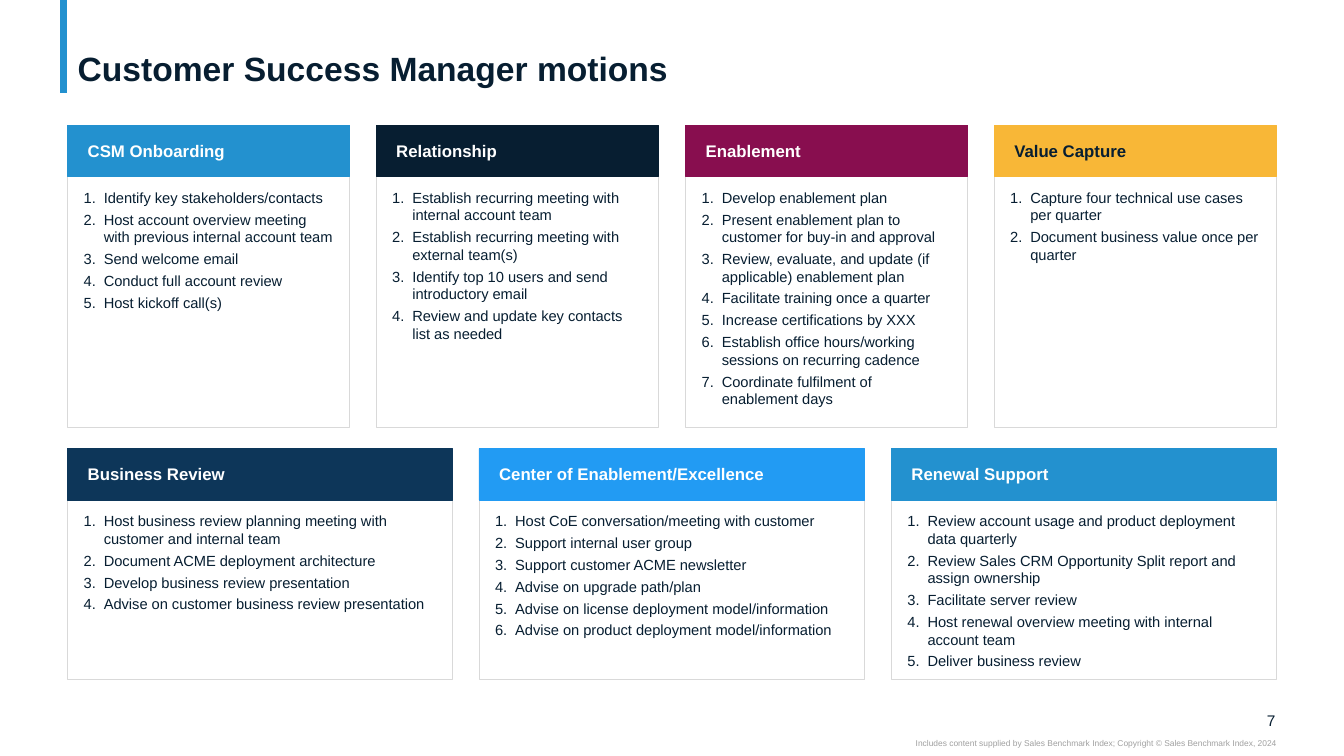
"""Build the slide of Customer Success Manager motions."""
from dataclasses import dataclass

from lxml.etree import SubElement
from pptx import Presentation
from pptx.dml.color import RGBColor
from pptx.enum.shapes import MSO_CONNECTOR, MSO_SHAPE
from pptx.enum.text import MSO_ANCHOR as Anchor, MSO_AUTO_SIZE, PP_ALIGN as Align
from pptx.oxml.ns import qn
from pptx.util import Pt

PX = 9144
FONT = "Arial"
BLUE = RGBColor(0x23, 0x91, 0xCF)
INK = RGBColor(0x07, 0x1E, 0x31)
PLUM = RGBColor(0x88, 0x0E, 0x4F)
AMBER = RGBColor(0xF8, 0xB7, 0x37)
NAVY = RGBColor(0x0D, 0x36, 0x59)
SKY = RGBColor(0x22, 0x9B, 0xF3)
WHITE = RGBColor(0xFF, 0xFF, 0xFF)
BORDER = RGBColor(0xD9, 0xD9, 0xD9)
GREY = RGBColor(0xA0, 0xA0, 0xA0)

LEFT, TOTAL_WIDTH, GAP = 67, 1199, 26
HEADER_HEIGHT = 51
INDENT = 20


@dataclass(frozen=True)
class Motion:
    title: str
    color: RGBColor
    steps: tuple[str, ...]
    title_color: RGBColor = WHITE


@dataclass(frozen=True)
class Row:
    top: int
    bottom: int
    motions: tuple[Motion, ...]


@dataclass(frozen=True)
class Note:
    text: str
    box: tuple[int, int, int, int]
    size: float
    color: RGBColor
    anchor: Anchor


ROWS = (
    Row(124, 424, (
        Motion("CSM Onboarding", BLUE, (
            "Identify key stakeholders/contacts",
            "Host account overview meeting with previous internal account team",
            "Send welcome email",
            "Conduct full account review",
            "Host kickoff call(s)",
        )),
        Motion("Relationship", INK, (
            "Establish recurring meeting with internal account team",
            "Establish recurring meeting with external team(s)",
            "Identify top 10 users and send introductory email",
            "Review and update key contacts list as needed",
        )),
        Motion("Enablement", PLUM, (
            "Develop enablement plan",
            "Present enablement plan to customer for buy-in and approval",
            "Review, evaluate, and update (if applicable) enablement plan",
            "Facilitate training once a quarter",
            "Increase certifications by XXX",
            "Establish office hours/working sessions on recurring cadence",
            "Coordinate fulfilment of enablement days",
        )),
        Motion("Value Capture", AMBER, (
            "Capture four technical use cases per quarter",
            "Document business value once per quarter",
        ), INK),
    )),
    Row(445, 674, (
        Motion("Business Review", NAVY, (
            "Host business review planning meeting with customer and internal team",
            "Document ACME deployment architecture",
            "Develop business review presentation",
            "Advise on customer business review presentation",
        )),
        Motion("Center of Enablement/Excellence", SKY, (
            "Host CoE conversation/meeting with customer",
            "Support internal user group",
            "Support customer ACME newsletter",
            "Advise on upgrade path/plan",
            "Advise on license deployment model/information",
            "Advise on product deployment model/information",
        )),
        Motion("Renewal Support", BLUE, (
            "Review account usage and product deployment data quarterly",
            "Review Sales CRM Opportunity Split report and assign ownership",
            "Facilitate server review",
            "Host renewal overview meeting with internal account team",
            "Deliver business review",
        )),
    )),
)
NOTES = (
    Note("7", (1232, 705, 33, 19), 11, INK, Anchor.MIDDLE),
    Note("Includes content supplied by Sales Benchmark Index; "
         "Copyright © Sales Benchmark Index, 2024",
         (750, 732, 516, 10), 6, GREY, Anchor.TOP),
)


def place(shape, left: int, top: int, width: int, height: int) -> None:
    shape.left, shape.top = left * PX, top * PX
    shape.width, shape.height = width * PX, height * PX


def set_frame(frame, anchor: Anchor, margins: tuple[int, int, int, int]) -> None:
    frame.word_wrap = True
    frame.auto_size = MSO_AUTO_SIZE.NONE
    frame.vertical_anchor = anchor
    (frame.margin_left, frame.margin_top,
     frame.margin_right, frame.margin_bottom) = (margin * PX for margin in margins)


def style(paragraph, size: float, color: RGBColor, bold: bool = False,
          align: Align = Align.LEFT) -> None:
    paragraph.alignment = align
    font = paragraph.font
    font.name, font.size, font.bold = FONT, Pt(size), bold
    font.color.rgb = color


def number(paragraph) -> None:
    properties = paragraph._p.get_or_add_pPr()
    properties.set("marL", str(INDENT * PX))
    properties.set("indent", str(-INDENT * PX))
    SubElement(properties, qn("a:buFont"), typeface=FONT)
    SubElement(properties, qn("a:buAutoNum"), type="arabicPeriod")


def add_box(slide, box: tuple[int, int, int, int], fill: RGBColor, line: RGBColor):
    shape = slide.shapes.add_shape(MSO_SHAPE.RECTANGLE, *(side * PX for side in box))
    shape.shadow.inherit = False
    shape.fill.solid()
    shape.fill.fore_color.rgb = fill
    shape.line.color.rgb = line
    shape.line.width = Pt(0.5)
    return shape


def add_motion(slide, motion: Motion, left: int, width: int, row: Row) -> None:
    body_top = row.top + HEADER_HEIGHT
    body = add_box(slide, (left, body_top, width, row.bottom - body_top), WHITE, BORDER)
    frame = body.text_frame
    set_frame(frame, Anchor.TOP, (16, 12, 16, 16))
    frame.text = "\n".join(motion.steps)
    for paragraph in frame.paragraphs:
        number(paragraph)
        paragraph.space_after = Pt(3)
        style(paragraph, 10.5, INK)

    header = add_box(slide, (left, row.top, width, HEADER_HEIGHT),
                     motion.color, motion.color)
    set_frame(header.text_frame, Anchor.MIDDLE, (20, 8, 20, 8))
    header.text_frame.text = motion.title
    style(header.text_frame.paragraphs[0], 12, motion.title_color, bold=True)


def add_row(slide, row: Row) -> None:
    pitch = (TOTAL_WIDTH + GAP) / len(row.motions)
    for index, motion in enumerate(row.motions):
        add_motion(slide, motion, round(LEFT + index * pitch), round(pitch - GAP), row)


def add_note(slide, note: Note) -> None:
    frame = slide.shapes.add_textbox(*(side * PX for side in note.box)).text_frame
    set_frame(frame, note.anchor, (0, 0, 0, 0))
    frame.text = note.text
    style(frame.paragraphs[0], note.size, note.color, align=Align.RIGHT)


def add_accent(slide) -> None:
    accent = slide.shapes.add_connector(MSO_CONNECTOR.STRAIGHT, 63 * PX, 0, 63 * PX, 92 * PX)
    accent.line.color.rgb = BLUE
    accent.line.width = Pt(5)
    SubElement(accent._element.spPr, qn("a:effectLst"))


def set_title(slide, text: str) -> None:
    title = slide.shapes.title
    place(title, LEFT, 4, TOTAL_WIDTH, 84)
    set_frame(title.text_frame, Anchor.BOTTOM, (10, 0, 10, 0))
    title.text_frame.text = text
    paragraph = title.text_frame.paragraphs[0]
    paragraph.line_spacing = 0.9
    style(paragraph, 24, INK, bold=True)


def main() -> None:
    presentation = Presentation()
    presentation.slide_width, presentation.slide_height = 1333 * PX, 750 * PX
    slide = presentation.slides.add_slide(presentation.slide_layouts[5])
    set_title(slide, "Customer Success Manager motions")
    add_accent(slide)
    for note in NOTES:
        add_note(slide, note)
    for row in ROWS:
        add_row(slide, row)
    presentation.save("out.pptx")


if __name__ == "__main__":
    main()
